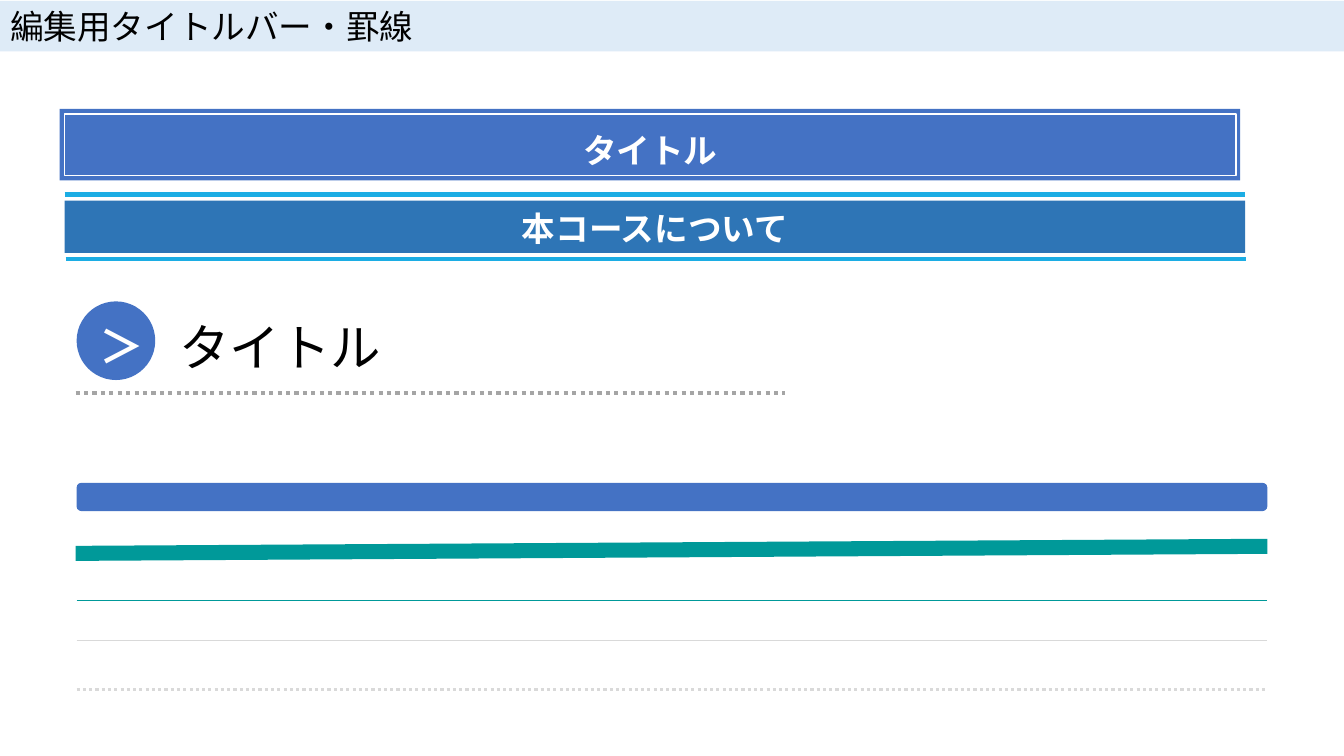
"""Build a slide of title bars and ruled lines for editing."""
from dataclasses import dataclass
from typing import Any, Optional

from lxml import etree
from pptx import Presentation
from pptx import util as u
from pptx.dml import color
from pptx.enum import dml, shapes, text
from pptx.oxml import ns

FONT = "Noto Sans CJK JP"
BLUE, DEEP_BLUE, PALE_BLUE, SKY = "4472C4", "2E75B6", "DEEBF7", "1CADE4"
TEAL, GRAY, LIGHT_GRAY = "009999", "A5A5A5", "D9D9D9"
WHITE, BLACK = "FFFFFF", "000000"
RULE_LEFT, RULE_RIGHT = 0.76, 12.57


@dataclass
class Label:
    words: str
    size: float
    color: str = WHITE
    bold: bool = True
    align: Any = text.PP_ALIGN.CENTER
    anchor: Any = text.MSO_ANCHOR.BOTTOM


@dataclass
class Block:
    left: float
    top: float
    width: float
    height: float
    fill: Optional[str] = None
    kind: Any = shapes.MSO_SHAPE.RECTANGLE
    outline: Optional[str] = None
    label: Optional[Label] = None


@dataclass
class Rule:
    left: float
    right: float
    start_y: float
    end_y: float
    color: str
    weight: float
    dotted: bool = False


def rgb(value: str) -> color.RGBColor:
    return color.RGBColor.from_string(value)


def assign(target: Any, values: dict[str, Any]) -> None:
    for name, value in values.items():
        setattr(target, name, value)


def write_label(shape: Any, label: Label) -> None:
    frame = shape.text_frame
    assign(frame, {"word_wrap": True, "auto_size": text.MSO_AUTO_SIZE.NONE,
                   "vertical_anchor": label.anchor})
    paragraph = frame.paragraphs[0]
    paragraph.alignment = label.align
    run = paragraph.add_run()
    run.text = label.words
    assign(run.font, {"name": FONT, "size": u.Pt(label.size), "bold": label.bold})
    run.font.color.rgb = rgb(label.color)
    east_asian = etree.SubElement(run.font._element, ns.qn("a:ea"))
    east_asian.set("typeface", FONT)


def draw_block(container: Any, block: Block) -> None:
    box = [u.Inches(n) for n in (block.left, block.top, block.width, block.height)]
    if block.fill:
        shape = container.add_shape(block.kind, *box)
        shape.shadow.inherit = False
        shape.fill.solid()
        shape.fill.fore_color.rgb = rgb(block.fill)
        if block.outline:
            shape.line.color.rgb = rgb(block.outline)
            shape.line.width = u.Pt(1)
        else:
            shape.line.fill.background()
    else:
        shape = container.add_textbox(*box)
    if block.label:
        write_label(shape, block.label)


def draw_rule(container: Any, rule: Rule) -> None:
    ends = [u.Inches(n) for n in (rule.left, rule.start_y, rule.right, rule.end_y)]
    connector = container.add_connector(shapes.MSO_CONNECTOR.STRAIGHT, *ends)
    connector.line.color.rgb = rgb(rule.color)
    connector.line.width = u.Pt(rule.weight)
    if rule.dotted:
        connector.line.dash_style = dml.MSO_LINE.ROUND_DOT
    etree.SubElement(connector._element.spPr, ns.qn("a:effectLst"))


def draw_all(container: Any, items: list[Block | Rule]) -> None:
    for item in items:
        if isinstance(item, Block):
            draw_block(container, item)
        else:
            draw_rule(container, item)


def draw_header(slide: Any) -> None:
    title = slide.shapes.title
    assign(title, {"left": 0, "top": u.Inches(0.01),
                   "width": u.Inches(13.33), "height": u.Inches(0.5)})
    title.fill.solid()
    title.fill.fore_color.rgb = rgb(PALE_BLUE)
    write_label(title, Label("編集用タイトルバー・罫線", 24, BLACK, False,
                             text.PP_ALIGN.LEFT, text.MSO_ANCHOR.TOP))


FRAMED_BAR = [
    Block(0.59, 1.08, 11.71, 0.71, BLUE),
    Block(0.64, 1.13, 11.62, 0.61, BLUE, outline=WHITE, label=Label("タイトル", 24)),
]
LINED_BAR = [
    Block(0.64, 1.99, 11.71, 0.52, DEEP_BLUE, label=Label("本コースについて", 24)),
    Rule(0.64, 12.35, 1.93, 1.93, SKY, 3),
    Rule(0.65, 12.36, 2.57, 2.57, SKY, 3),
]
HEADING = [
    Block(RULE_LEFT, 2.99, 0.78, 0.78, BLUE, shapes.MSO_SHAPE.OVAL),
    Block(0.89, 3.11, 0.69, 0.91, label=Label(
        "＞", 32, align=text.PP_ALIGN.LEFT, anchor=text.MSO_ANCHOR.TOP)),
    Rule(0.75, 7.79, 3.9, 3.9, GRAY, 3, True),
    Block(1.68, 3.09, 6.11, 0.71, label=Label(
        "タイトル", 36, BLACK, False, text.PP_ALIGN.LEFT, text.MSO_ANCHOR.TOP)),
]
DIVIDERS = [
    Block(RULE_LEFT, 4.79, RULE_RIGHT - RULE_LEFT, 0.28, BLUE,
          shapes.MSO_SHAPE.ROUNDED_RECTANGLE),
    Rule(0.75, RULE_RIGHT, 5.49, 5.42, TEAL, 10.75),
    Rule(RULE_LEFT, RULE_RIGHT, 5.95, 5.95, TEAL, 0.25),
    Rule(RULE_LEFT, RULE_RIGHT, 6.35, 6.35, LIGHT_GRAY, 0.25),
    Rule(RULE_LEFT, RULE_RIGHT, 6.84, 6.84, LIGHT_GRAY, 2.25, True),
]


def main() -> None:
    presentation = Presentation()
    assign(presentation, {"slide_width": u.Inches(13.33), "slide_height": u.Inches(7.5)})
    slide = presentation.slides.add_slide(presentation.slide_layouts[5])
    draw_header(slide)
    for items in (FRAMED_BAR, LINED_BAR, HEADING):
        draw_all(slide.shapes.add_group_shape().shapes, items)
    draw_all(slide.shapes, DIVIDERS)
    presentation.save("out.pptx")


if __name__ == "__main__":
    main()
